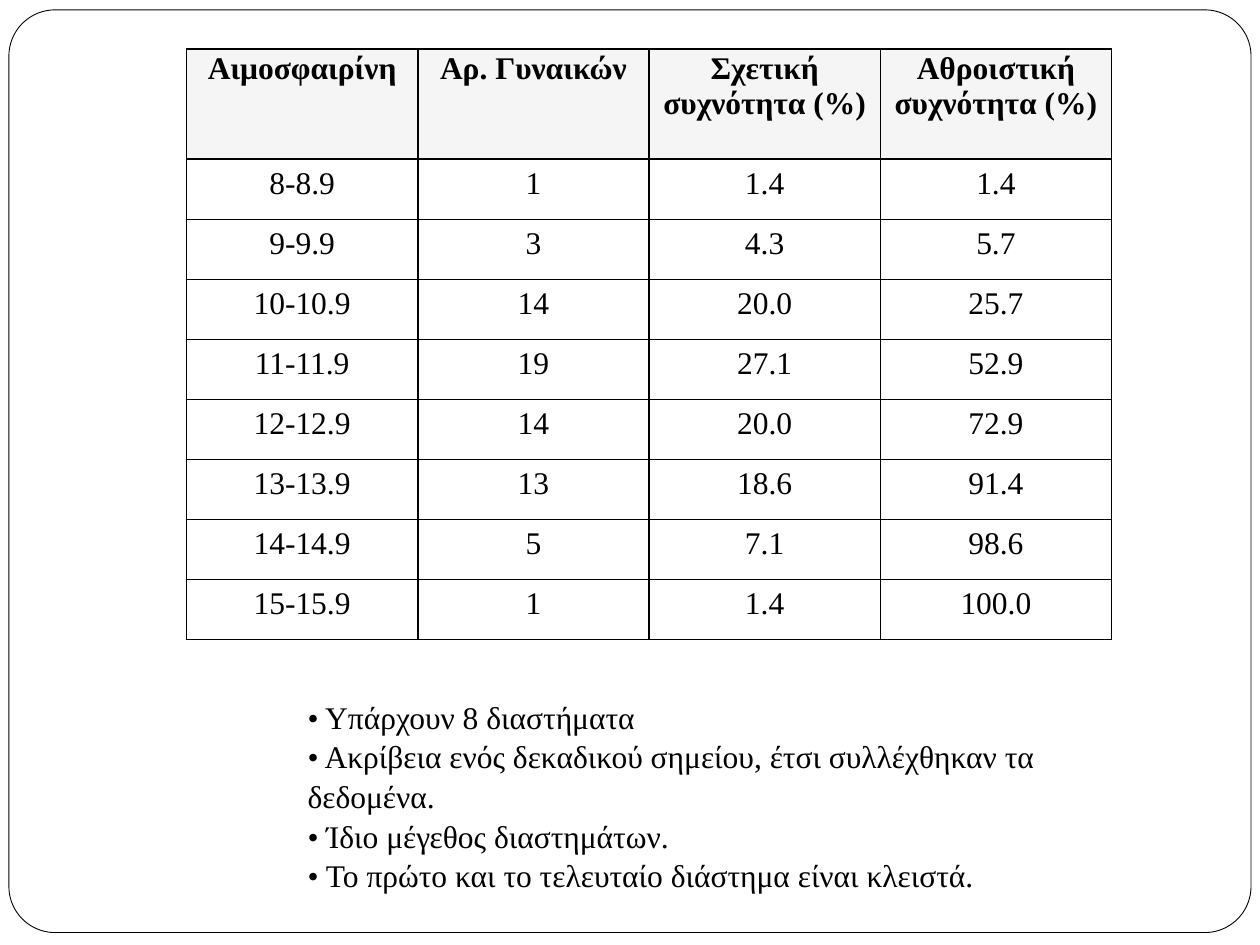
from lxml.etree import SubElement as Sub
from pptx import Presentation
from pptx.dml.color import RGBColor
from pptx.enum.shapes import MSO_SHAPE as Shape
from pptx.enum.text import MSO_AUTO_SIZE as AutoSize, PP_ALIGN as Align
from pptx.oxml.ns import qn
from pptx.util import Cm, Pt

BLACK = RGBColor(0x00, 0x00, 0x00)
WHITE = RGBColor(0xFF, 0xFF, 0xFF)
HEADER_GREY = RGBColor(0xF5, 0xF5, 0xF5)

HEADINGS = ["Αιμοσφαιρίνη", "Αρ. Γυναικών", "Σχετική συχνότητα (%)", "Αθροιστική συχνότητα (%)"]
FREQUENCIES = [
    ["8-8.9", "1", "1.4", "1.4"],
    ["9-9.9", "3", "4.3", "5.7"],
    ["10-10.9", "14", "20.0", "25.7"],
    ["11-11.9", "19", "27.1", "52.9"],
    ["12-12.9", "14", "20.0", "72.9"],
    ["13-13.9", "13", "18.6", "91.4"],
    ["14-14.9", "5", "7.1", "98.6"],
    ["15-15.9", "1", "1.4", "100.0"],
]
REMARKS = [
    "• Υπάρχουν 8 διαστήματα",
    "• Ακρίβεια ενός δεκαδικού σημείου, έτσι συλλέχθηκαν τα δεδομένα.",
    "• Ίδιο μέγεθος διαστημάτων.",
    "• Το πρώτο και το τελευταίο διάστημα είναι κλειστά.",
]


class SlideBuilder:
    """Draws styled elements on the current slide."""

    font_name = "Times New Roman"
    font_size = Pt(18)

    def __init__(self, page):
        self.page = page

    def span(self, para, text, bold=False):
        span = para.add_run()
        span.text = text
        span.font.name = self.font_name
        span.font.size = self.font_size
        span.font.bold = bold
        span.font.color.rgb = BLACK

    def frame(self, left, top, width, height, rounding):
        frame = self.page.shapes.add_shape(Shape.ROUNDED_RECTANGLE, left, top, width, height)
        frame.adjustments[0] = rounding
        frame.shadow.inherit = False
        frame.fill.solid()
        frame.fill.fore_color.rgb = WHITE
        frame.line.color.rgb = BLACK
        frame.line.width = Pt(0.5)

    def borders(self, cell):
        properties = cell._tc.get_or_add_tcPr()
        for position, side in enumerate(("a:lnL", "a:lnR", "a:lnT", "a:lnB")):
            line = Sub(properties, qn(side), w=str(Pt(1)))
            Sub(Sub(line, qn("a:solidFill")), qn("a:srgbClr"), val=str(BLACK))
            properties.insert(position, line)

    def cell(self, cell, text, header):
        cell.margin_left = cell.margin_right = Cm(0.05 if header else 0.2)
        cell.margin_top = cell.margin_bottom = Cm(0.05 if header else 0.15)
        cell.fill.solid()
        cell.fill.fore_color.rgb = HEADER_GREY if header else WHITE
        para = cell.text_frame.paragraphs[0]
        para.alignment = Align.CENTER
        self.span(para, text, bold=header)
        self.borders(cell)

    def table(self, left, top, width, header_height, row_height, rows):
        height = header_height + row_height * (len(rows) - 1)
        table = self.page.shapes.add_table(len(rows), len(rows[0]), left, top, width, height).table
        for row_index, texts in enumerate(rows):
            header = row_index == 0
            table.rows[row_index].height = header_height if header else row_height
            for column_index, text in enumerate(texts):
                self.cell(table.cell(row_index, column_index), text, header)

    def text(self, left, top, width, height, lines):
        box = self.page.shapes.add_textbox(left, top, width, height)
        box.text_frame.word_wrap = True
        box.text_frame.auto_size = AutoSize.SHAPE_TO_FIT_TEXT
        para = box.text_frame.paragraphs[0]
        para.line_spacing = 1.05
        for index, line in enumerate(lines):
            if index:
                para.add_line_break()
            self.span(para, line)


def main():
    deck = Presentation()
    deck.slide_width, deck.slide_height = Cm(25.4), Cm(19.05)
    builder = SlideBuilder(deck.slides.add_slide(deck.slide_layouts[6]))
    builder.frame(Cm(0.18), Cm(0.2), Cm(25.04), Cm(18.6), 0.05)
    builder.table(Cm(3.76), Cm(0.99), Cm(18.65), Cm(2.22), Cm(1.21), [HEADINGS, *FREQUENCIES])
    builder.text(Cm(5.95), Cm(13.9), Cm(15.88), Cm(4.11), REMARKS)
    deck.save("out.pptx")


if __name__ == "__main__":
    main()
